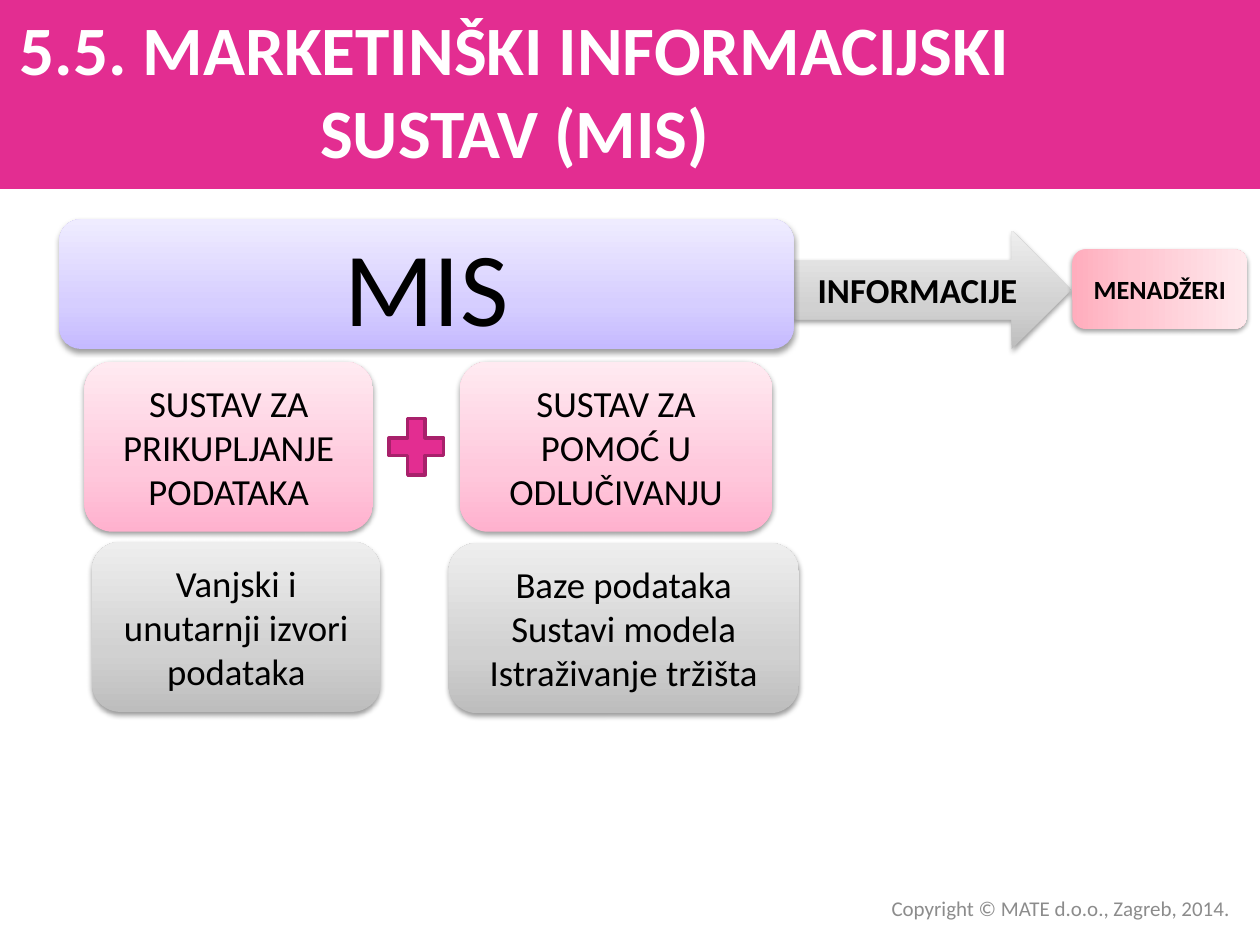
from lxml import etree
from pptx import Presentation
from pptx.dml.color import RGBColor
from pptx.enum.shapes import MSO_SHAPE as Shape
from pptx.enum.text import MSO_ANCHOR as Anchor, PP_ALIGN as Align
from pptx.oxml.ns import qn
from pptx.util import Inches, Pt

PINK = ("FFB1CE", "FFC8DC", "FFEAF1")
ROSE = ("FFADBD", "FFC5D0", "FFE9ED")
GREY = ("BDBDBD", "D1D1D1", "EEEEEE")
VIOLET = ("C5BAFF", "D6CEFF", "EFECFF")
MAGENTA = "E32D91"
STOPS = (0, 35, 100)


def rgb(color):
    return RGBColor.from_string(color)


def add_node(parent, tag, **attributes):
    values = {name: str(value) for name, value in attributes.items()}
    return etree.SubElement(parent, qn(tag), values)


def write_text(shape, text, size=21, color="000000", bold=False, align=Align.CENTER):
    """Write one paragraph per line of text."""
    frame = shape.text_frame
    frame.word_wrap = True
    frame.vertical_anchor = Anchor.MIDDLE
    frame.text = text
    for paragraph in frame.paragraphs:
        paragraph.alignment = align
        font = paragraph.font
        font.name = "Calibri"
        font.size = Pt(size)
        font.bold = bold
        font.color.rgb = rgb(color)


def add_text(slide, box, text, **text_format):
    shape = slide.shapes.add_textbox(*map(Inches, box))
    write_text(shape, text, **text_format)
    return shape


def add_flat_shape(slide, kind, box, fill, line=None):
    shape = slide.shapes.add_shape(kind, *map(Inches, box))
    shape.shadow.inherit = False
    shape.fill.solid()
    shape.fill.fore_color.rgb = rgb(fill)
    if line:
        shape.line.color.rgb = rgb(line)
        shape.line.width = Pt(2)
    else:
        shape.line.fill.background()
    return shape


def add_glossy_shape(slide, kind, box, colors, text, **text_format):
    """Add a labelled shape with an upward gradient and a soft shadow."""
    shape = slide.shapes.add_shape(kind, *map(Inches, box))
    properties = shape._element.spPr

    # Gradient with three stops
    gradient = add_node(properties, "a:gradFill", rotWithShape=1)
    stops = add_node(gradient, "a:gsLst")
    for position, color in zip(STOPS, colors):
        stop = add_node(stops, "a:gs", pos=position * 1000)
        add_node(stop, "a:srgbClr", val=color)
    add_node(gradient, "a:lin", ang=270 * 60000, scaled=0)
    shape.line.fill.background()

    # Shadow straight below
    shape.shadow.inherit = False
    effects = properties.find(qn("a:effectLst"))
    shadow = add_node(effects, "a:outerShdw", blurRad=Pt(3.1), dist=Pt(1.6),
                      dir=90 * 60000, rotWithShape=0)
    shadow_color = add_node(shadow, "a:srgbClr", val="000000")
    add_node(shadow_color, "a:alpha", val=38000)

    write_text(shape, text, **text_format)
    return shape


def main():
    presentation = Presentation()
    presentation.slide_width = Inches(10)
    presentation.slide_height = Inches(7.5)
    slide = presentation.slides.add_slide(presentation.slide_layouts[6])

    # Title band
    add_flat_shape(slide, Shape.RECTANGLE, (0, 0, 10, 1.5), MAGENTA)

    # Two subsystems joined by a plus
    rounded = Shape.ROUNDED_RECTANGLE
    add_glossy_shape(slide, rounded, (0.67, 2.87, 2.29, 1.35), PINK,
                     "SUSTAV ZA PRIKUPLJANJE PODATAKA")
    add_glossy_shape(slide, rounded, (3.65, 2.87, 2.48, 1.35), PINK,
                     "SUSTAV ZA POMOĆ U ODLUČIVANJU")
    add_flat_shape(slide, Shape.MATH_PLUS, (3.01, 3.24, 0.59, 0.61), MAGENTA,
                   line="A8216B")

    # Information flow from the system to the managers
    add_glossy_shape(slide, Shape.RIGHT_ARROW, (6.3, 1.83, 2.2, 0.94), GREY,
                     "INFORMACIJE", size=20, bold=True)
    managers = add_glossy_shape(slide, rounded, (8.89, 1.6, 0.63, 1.39), ROSE,
                                "MENADŽERI", size=15, bold=True)
    managers.rotation = 90
    managers.text_frame._txBody.bodyPr.set("vert", "vert270")
    add_glossy_shape(slide, rounded, (0.47, 1.74, 5.83, 1.03), VIOLET,
                     "MIS", size=60)

    # Sources of each subsystem
    add_glossy_shape(slide, rounded, (0.73, 4.3, 2.29, 1.35), GREY,
                     "Vanjski i unutarnji izvori podataka")
    add_glossy_shape(slide, rounded, (3.56, 4.31, 2.78, 1.35), GREY,
                     "Baze podataka\nSustavi modela Istraživanje tržišta")

    # Title and copyright line
    add_text(slide, (0, 0.08, 8.17, 1.25), "5.5. MARKETINŠKI INFORMACIJSKI SUSTAV (MIS)",
             size=39.6, color="FFFFFF", bold=True)
    add_text(slide, (4.69, 7.06, 5.17, 0.3), "Copyright © MATE d.o.o., Zagreb, 2014.",
             size=12, color="8C8C8C", align=Align.RIGHT)

    presentation.save("out.pptx")


if __name__ == "__main__":
    main()
